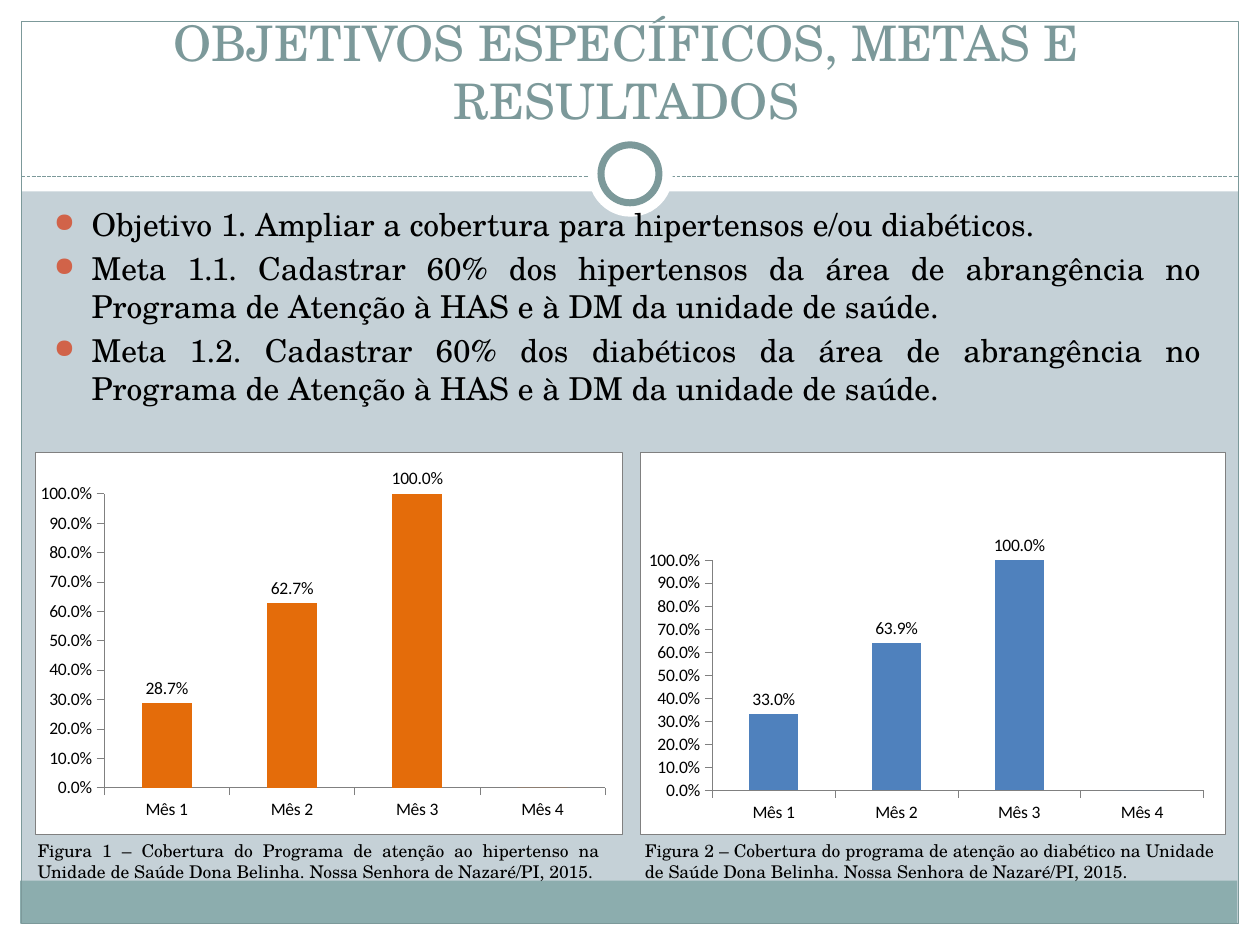
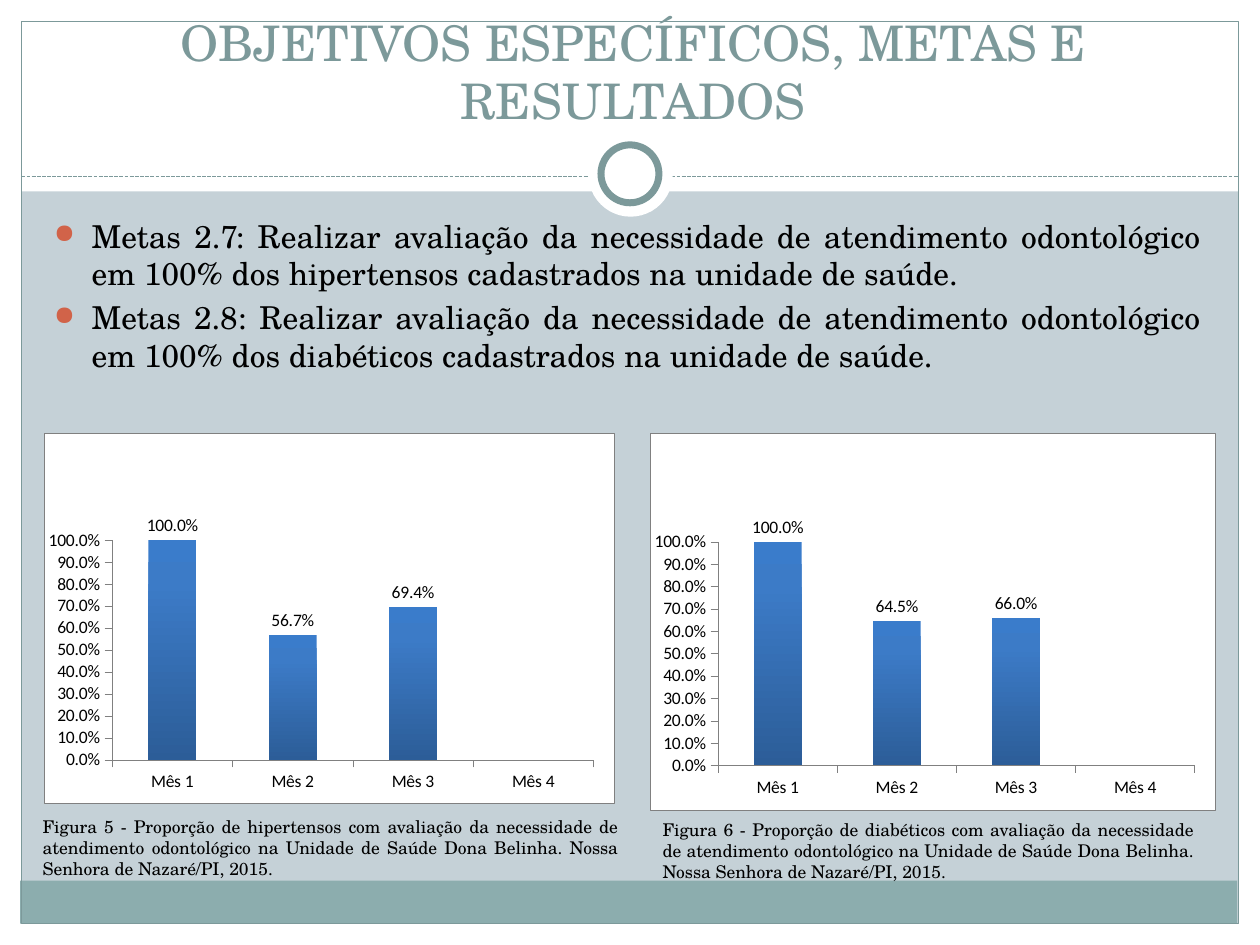
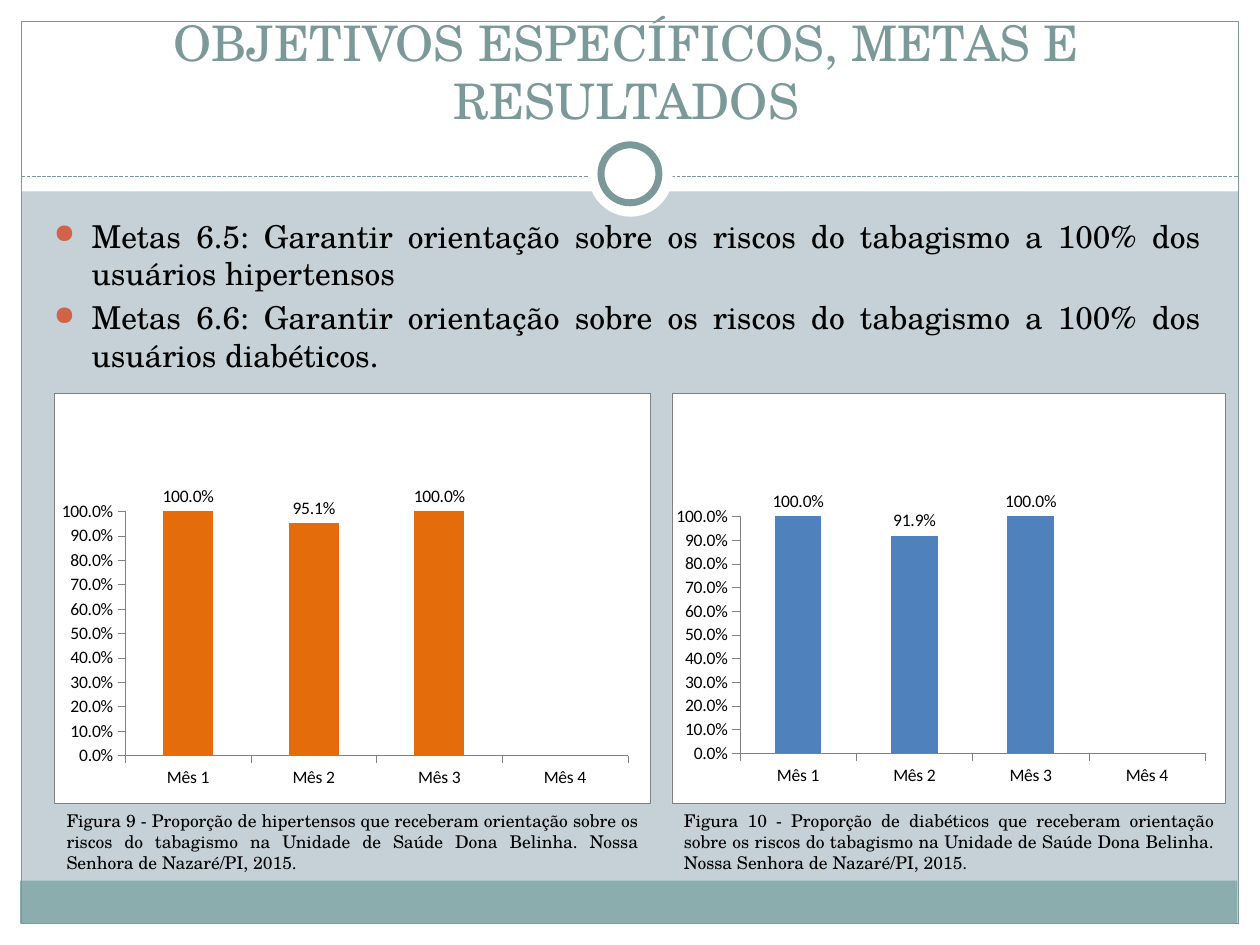
from copy import deepcopy
from typing import NamedTuple

from lxml.etree import SubElement
from pptx import Presentation
from pptx.chart.data import CategoryChartData
from pptx.dml.color import RGBColor
from pptx.enum.chart import XL_CHART_TYPE, XL_LABEL_POSITION, XL_TICK_MARK
from pptx.enum.dml import MSO_LINE
from pptx.enum.shapes import MSO_CONNECTOR, MSO_SHAPE, PP_PLACEHOLDER
from pptx.enum.text import MSO_ANCHOR, MSO_AUTO_SIZE, PP_ALIGN
from pptx.oxml import parse_xml
from pptx.oxml.ns import nsdecls, qn
from pptx.util import Emu, Pt

# Shared look
SCALE = 9144  # EMU per px, 100 px to the inch
SERIF, SANS = "TeX Gyre Schola", "Calibri"
BLACK, WHITE, GRAY = "000000", "FFFFFF", "808080"
PALE, TEAL, BAND, RUST = "C5D1D7", "7C999A", "8CADAE", "D16349"
ORANGE, BLUE = "E46C0A", "4F81BD"
SHADES = ((0, "3A7CCB"), (0.2, "3C7BC7"), (1, "2C5D98"))
TITLE = "OBJETIVOS ESPECÍFICOS, METAS E RESULTADOS"
MONTHS = ("Mês 1", "Mês 2", "Mês 3", "Mês 4")
PLACE = "Unidade de Saúde Dona Belinha. Nossa Senhora de Nazaré/PI, 2015."
PERCENT = "0.0%"


class Box(NamedTuple):
    left: int
    top: int
    width: int
    height: int


class Part(NamedTuple):
    kind: MSO_SHAPE
    box: Box
    fill: str = ""
    line: str = ""
    weight: float = 0.75


class Panel(NamedTuple):
    box: Box
    values: tuple[float, ...]
    fill: str | tuple
    plot: tuple[float, ...]  # x, y, w, h as shares of the chart
    note: Box
    text: str


class Page(NamedTuple):
    title: Box
    body: Box
    goals: tuple[str, ...]
    panels: tuple[Panel, ...]


RECT, OVAL = MSO_SHAPE.RECTANGLE, MSO_SHAPE.OVAL
EDGES = (
    Part(RECT, Box(0, 733, 1000, 17), WHITE),
    Part(RECT, Box(0, 0, 1000, 152), WHITE),
    Part(RECT, Box(0, 0, 17, 750), WHITE),
    Part(RECT, Box(983, 0, 17, 750), WHITE),
    Part(RECT, Box(16, 699, 966, 34), BAND),
    Part(RECT, Box(17, 17, 966, 716), line=TEAL),
)
RINGS = (
    Part(OVAL, Box(467, 105, 67, 67), WHITE),
    Part(OVAL, Box(477, 115, 46, 46), WHITE, TEAL, 4),
)

# Content
WIDE = Box(14, 25, 966, 83)
LOW = Box(33, 167, 930, 500)
PAGES = (
    Page(
        WIDE,
        Box(33, 158, 930, 500),
        (
            "Objetivo 1. Ampliar a cobertura para hipertensos e/ou diabéticos.",
            "Meta 1.1. Cadastrar 60% dos hipertensos da área de abrangência no "
            "Programa de Atenção à HAS e à DM da unidade de saúde.",
            "Meta 1.2. Cadastrar 60% dos diabéticos da área de abrangência no "
            "Programa de Atenção à HAS e à DM da unidade de saúde.",
        ),
        (
            Panel(Box(28, 359, 466, 303), (0.287, 0.627, 1, 0), ORANGE,
                  (0.117, 0.108, 0.854, 0.771), Box(20, 662, 465, 44),
                  "Figura 1 – Cobertura do Programa de atenção ao hipertenso na "),
            Panel(Box(508, 359, 465, 303), (0.33, 0.639, 1, 0), BLUE,
                  (0.123, 0.282, 0.839, 0.604), Box(502, 662, 471, 44),
                  "Figura 2 – Cobertura do programa de atenção ao diabético na "),
        ),
    ),
    Page(
        Box(24, 25, 957, 83),
        LOW,
        (
            "Metas 2.7: Realizar avaliação da necessidade de atendimento "
            "odontológico em 100% dos hipertensos cadastrados na unidade de saúde.",
            "Metas 2.8: Realizar avaliação da necessidade de atendimento "
            "odontológico em 100% dos diabéticos cadastrados na unidade de saúde.",
        ),
        (
            Panel(Box(35, 344, 453, 294), (1, 0.567, 0.694, 0), SHADES,
                  (0.119, 0.288, 0.844, 0.594), Box(24, 643, 476, 61),
                  "Figura 5 - Proporção de hipertensos com avaliação da "
                  "necessidade de atendimento odontológico na "),
            Panel(Box(516, 344, 449, 299), (1, 0.645, 0.66, 0), SHADES,
                  (0.12, 0.288, 0.843, 0.594), Box(516, 645, 441, 61),
                  "Figura 6 - Proporção de diabéticos com avaliação da "
                  "necessidade de atendimento odontológico na "),
        ),
    ),
    Page(
        WIDE,
        LOW,
        (
            "Metas 6.5: Garantir orientação sobre os riscos do tabagismo a 100% "
            "dos usuários hipertensos",
            "Metas 6.6: Garantir orientação sobre os riscos do tabagismo a 100% "
            "dos usuários diabéticos.",
        ),
        (
            Panel(Box(43, 312, 473, 326), (1, 0.951, 1, 0), ORANGE,
                  (0.119, 0.288, 0.844, 0.595), Box(43, 638, 473, 61),
                  "Figura 9 - Proporção de hipertensos que receberam orientação "
                  "sobre os riscos do tabagismo na "),
            Panel(Box(533, 312, 440, 326), (1, 0.919, 1, 0), BLUE,
                  (0.123, 0.3, 0.84, 0.578), Box(533, 638, 440, 61),
                  "Figura 10 - Proporção de diabéticos que receberam orientação "
                  "sobre os riscos do tabagismo na "),
        ),
    ),
)


# Basic tools
def px(size: int) -> Emu:
    return Emu(size * SCALE)


def area(box: Box) -> list[Emu]:
    return [px(size) for size in box]


def rgb(color: str) -> RGBColor:
    return RGBColor.from_string(color)


def paint(fill, color: str) -> None:
    fill.solid()
    fill.fore_color.rgb = rgb(color)


def write(frame, *lines: str, size: float, color: str = BLACK,
          align=PP_ALIGN.JUSTIFY, anchor=MSO_ANCHOR.TOP,
          fit=MSO_AUTO_SIZE.NONE, before: float = 0, dots: bool = False) -> None:
    frame.word_wrap = True
    frame.auto_size = fit
    frame.vertical_anchor = anchor
    for index, line in enumerate(lines):
        para = frame.add_paragraph() if index else frame.paragraphs[0]
        para.alignment = align
        para.space_before = Pt(before)
        run = para.add_run()
        run.text = line
        run.font.name, run.font.size = SERIF, Pt(size)
        run.font.color.rgb = rgb(color)
        if dots:
            add_dot(para)


def add_dot(para) -> None:
    props = para._p.get_or_add_pPr()
    props.set("marL", str(px(30)))
    props.set("indent", str(px(-30)))
    SubElement(SubElement(props, qn("a:buClr")), qn("a:srgbClr"), val=RUST)
    SubElement(props, qn("a:buSzPct"), val="85000")
    SubElement(props, qn("a:buChar"), char="●")


# Frame shared by all slides
def add_part(shapes, part: Part) -> None:
    shape = shapes.add_shape(part.kind, *area(part.box))
    shape.shadow.inherit = False
    if part.fill:
        paint(shape.fill, part.fill)
    else:
        shape.fill.background()
    if part.line:
        paint(shape.line.fill, part.line)
        shape.line.width = Pt(part.weight)
    else:
        shape.line.fill.background()


def add_rule(shapes) -> None:
    rule = shapes.add_connector(MSO_CONNECTOR.STRAIGHT,
                                px(17), px(140), px(983), px(140))
    paint(rule.line.fill, TEAL)
    rule.line.width = Pt(0.75)
    rule.line.dash_style = MSO_LINE.SQUARE_DOT
    SubElement(rule.element.spPr, qn("a:effectLst"))


def set_frame(layout, slide) -> None:
    """Draw the frame on a slide, then move it to the layout."""
    paint(layout.background.fill, PALE)
    for holder in list(layout.placeholders):
        if holder.placeholder_format.type != PP_PLACEHOLDER.TITLE:
            layout.shapes.element.remove(holder.element)
    for part in EDGES:
        add_part(slide.shapes, part)
    add_rule(slide.shapes)
    for part in RINGS:
        add_part(slide.shapes, part)
    for shape in list(slide.shapes):
        if not shape.is_placeholder:
            layout.shapes.element.append(shape.element)


# Charts
def style_axis(axis) -> None:
    axis.has_major_gridlines = False
    axis.major_tick_mark = XL_TICK_MARK.OUTSIDE
    axis.minor_tick_mark = XL_TICK_MARK.NONE
    paint(axis.format.line.fill, GRAY)
    axis.format.line.width = Pt(0.25)


def fill_bars(chart, fill: str | tuple) -> None:
    bars = chart.plots[0].series[0]
    bars.invert_if_negative = False
    look = bars.format.fill
    if isinstance(fill, str):
        paint(look, fill)
        return
    look.gradient()
    look.gradient_angle = 270
    stops = chart.element.xpath(".//c:ser//a:gsLst")[0]
    stops.append(deepcopy(stops[-1]))
    for stop, (spot, color) in zip(look.gradient_stops, fill):
        stop.position = spot
        stop.color.rgb = rgb(color)


def add_labels(chart) -> None:
    labels = chart.plots[0].series[0].data_labels
    labels.show_value = True
    labels.number_format = PERCENT
    labels.number_format_is_linked = False
    labels.position = XL_LABEL_POSITION.OUTSIDE_END
    # The empty last month has no label
    chart.element.xpath(".//c:ser/c:dLbls")[0].insert(0, parse_xml(
        f'<c:dLbl {nsdecls("c")}><c:idx val="{len(MONTHS) - 1}"/>'
        '<c:delete val="1"/></c:dLbl>'))


def set_areas(chart, plot: tuple[float, ...]) -> None:
    def back(line: str):
        return parse_xml(
            f'<c:spPr {nsdecls("c", "a")}><a:solidFill><a:srgbClr val="{WHITE}"/>'
            f'</a:solidFill>{line}</c:spPr>')

    region = chart.element.xpath(".//c:plotArea")[0]
    for old in region.findall(qn("c:layout")):
        region.remove(old)
    sizes = "".join(f'<c:{key} val="{share}"/>' for key, share in zip("xywh", plot))
    region.insert(0, parse_xml(
        f'<c:layout {nsdecls("c")}><c:manualLayout><c:layoutTarget val="inner"/>'
        f'<c:xMode val="edge"/><c:yMode val="edge"/>{sizes}'
        '</c:manualLayout></c:layout>'))
    region.append(back("<a:ln><a:noFill/></a:ln>"))
    chart.element.find(qn("c:chart")).addnext(back(
        f'<a:ln w="{Pt(0.25)}"><a:solidFill><a:srgbClr val="{GRAY}"/>'
        '</a:solidFill></a:ln>'))


def add_panel(shapes, panel: Panel) -> None:
    data = CategoryChartData(number_format=PERCENT)
    data.categories = MONTHS
    data.add_series("Series 1", panel.values)
    chart = shapes.add_chart(XL_CHART_TYPE.COLUMN_CLUSTERED,
                             *area(panel.box), data).chart
    chart.has_title = chart.has_legend = False
    chart.font.name, chart.font.size = SANS, Pt(10)
    chart.font.color.rgb = rgb(BLACK)
    chart.plots[0].gap_width = 150
    chart.plots[0].vary_by_categories = False
    scale = chart.value_axis
    for axis in (chart.category_axis, scale):
        style_axis(axis)
    scale.minimum_scale, scale.maximum_scale, scale.major_unit = 0, 1, 0.1
    scale.tick_labels.number_format = PERCENT
    scale.tick_labels.number_format_is_linked = False
    fill_bars(chart, panel.fill)
    add_labels(chart)
    set_areas(chart, panel.plot)
    note = shapes.add_textbox(*area(panel.note))
    write(note.text_frame, panel.text + PLACE, size=10,
          fit=MSO_AUTO_SIZE.SHAPE_TO_FIT_TEXT)


# Slides
def fill_page(slide, page: Page) -> None:
    title = slide.shapes.title
    title.left, title.top, title.width, title.height = area(page.title)
    write(title.text_frame, TITLE, size=28, color=TEAL,
          align=PP_ALIGN.CENTER, anchor=MSO_ANCHOR.BOTTOM)
    body = slide.shapes.add_textbox(*area(page.body))
    write(body.text_frame, *page.goals, size=18, before=3.6, dots=True)
    for panel in page.panels:
        add_panel(slide.shapes, panel)


def main() -> None:
    deck = Presentation()
    deck.slide_width, deck.slide_height = px(1000), px(750)
    layout = deck.slide_layouts[5]
    slides = [deck.slides.add_slide(layout) for _ in PAGES]
    set_frame(layout, slides[0])
    for slide, page in zip(slides, PAGES):
        fill_page(slide, page)
    deck.save("out.pptx")


if __name__ == "__main__":
    main()
